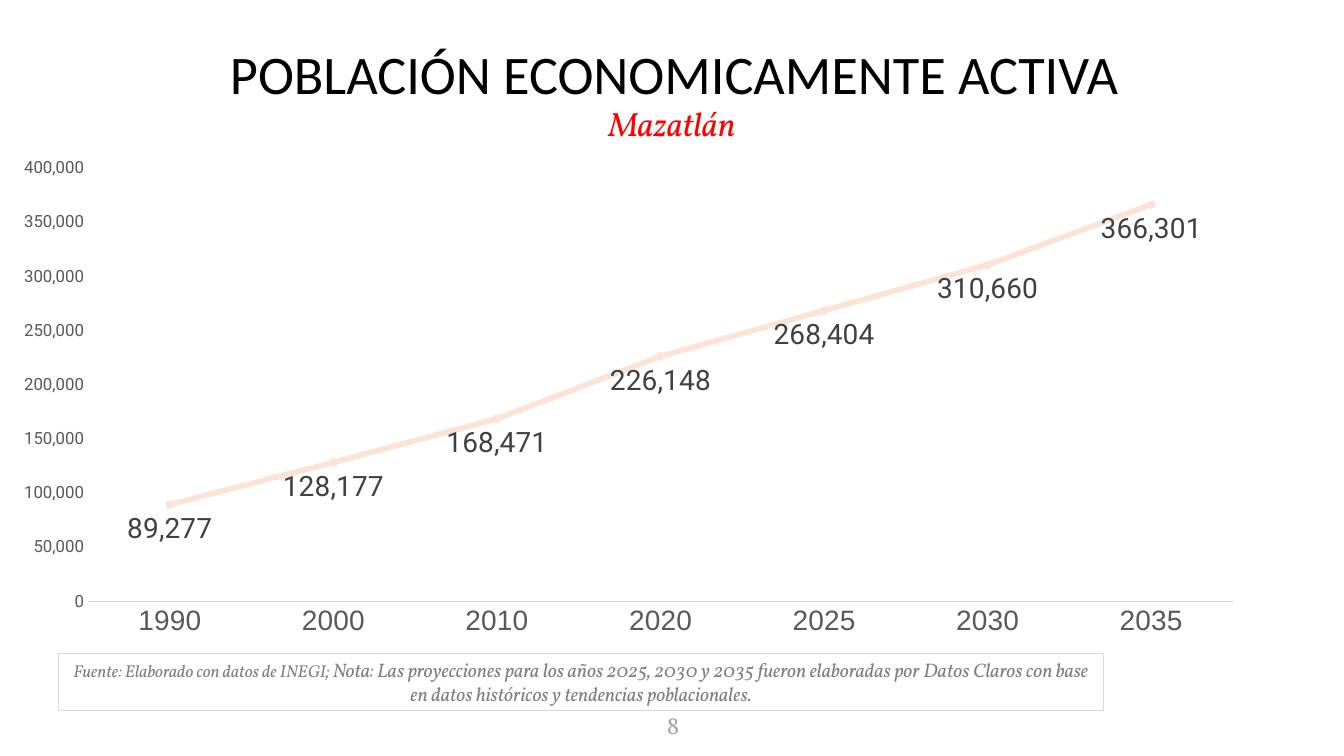
"""Build the slide on the economically active population of Mazatlán."""
from pptx import Presentation
from pptx.chart.data import CategoryChartData
from pptx.dml.color import RGBColor
from pptx.enum import chart as ch, shapes, text
from pptx.oxml import parse_xml
from pptx.oxml.ns import nsdecls
from pptx.util import Inches, Pt


def set_font(font, name, size, color, italic=False):
    font.name, font.size, font.italic = name, Pt(size), italic
    font.color.rgb = RGBColor.from_string(color)


def fill_text(sp, runs, name, color, italic=False):
    tf = sp.text_frame
    tf.word_wrap = True
    tf.vertical_anchor = text.MSO_ANCHOR.MIDDLE
    p = tf.paragraphs[0]
    p.alignment = text.PP_ALIGN.CENTER
    set_font(p.font, name, runs[0][1], color, italic)
    for words, size in runs:
        r = p.add_run()
        r.text = words
        set_font(r.font, name, size, color, italic)
    return p


prs = Presentation()
prs.slide_width, prs.slide_height = Inches(13.33), Inches(7.5)
s = prs.slides.add_slide(prs.slide_layouts[6])

number = s.shapes.add_textbox(Inches(6.13), Inches(7.08), Inches(1.07), Inches(0.24))
fill_text(number, [("8", 17.6)], "Vollkorn", "A6A6A6")
tf = number.text_frame
tf.margin_left, tf.margin_top = Inches(0.12), Inches(0.02)

note = s.shapes.add_shape(shapes.MSO_SHAPE.RECTANGLE, Inches(0.58), Inches(6.48),
                          Inches(10.37), Inches(0.57))
note.shadow.inherit = False
note.fill.background()
note.line.color.rgb = RGBColor.from_string("D9D9D9")
note.line.width = Pt(0.75)
fill_text(note, [
    ("Fuente: Elaborado con datos de INEGI; ", 12.3),
    ("Nota: Las proyecciones para los años 2025, 2030 y 2035 fueron elaboradas por "
     "Datos Claros con base en datos históricos y tendencias poblacionales.", 14),
], "Vollkorn", "808080", True)

data = CategoryChartData(number_format="#,##0")
data.categories = ["1990", "2000", "2010", "2020", "2025", "2030", "2035"]
data.add_series("Series 1", [89277, 128177, 168471, 226148, 268404, 310660, 366301])
chart = s.shapes.add_chart(ch.XL_CHART_TYPE.LINE_MARKERS_STACKED, Inches(0), Inches(1.47),
                           Inches(12.48), Inches(4.94), data).chart
chart.has_legend = chart.has_title = False
set_font(chart.font, "Cabin", 10, "000000")

cat, val = chart.category_axis, chart.value_axis
for axis, name, size in (cat, "Arial", 20), (val, "Roboto", 12):
    axis.major_tick_mark = axis.minor_tick_mark = ch.XL_TICK_MARK.NONE
    axis.has_major_gridlines = False
    set_font(axis.tick_labels.font, name, size, "595959")
cat.format.line.color.rgb = RGBColor.from_string("D9D9D9")
cat.format.line.width = Pt(0.75)
val.format.line.fill.background()
val.minimum_scale, val.maximum_scale, val.major_unit = 0, 400000, 50000
val.tick_labels.number_format = "#,##0"
val.tick_labels.number_format_is_linked = False

plot = chart.plots[0]
plot.vary_by_categories = False
series = plot.series[0]
series.smooth = False
peach = RGBColor.from_string("FBE3D6")
series.format.line.color.rgb = peach
series.format.line.width = Pt(4)
marker = series.marker
marker.style, marker.size = ch.XL_MARKER_STYLE.CIRCLE, 5
marker.format.fill.solid()
marker.format.fill.fore_color.rgb = peach
marker.format.line.color.rgb = peach
labels = series.data_labels
labels.show_value = True
labels.position = ch.XL_LABEL_POSITION.BELOW
labels.number_format, labels.number_format_is_linked = "#,##0", False
set_font(labels.font, "Roboto", 20, "404040")

area = chart._chartSpace.chart.plotArea
for old in area.xpath("c:layout"):
    area.remove(old)
area.insert(0, parse_xml(
    f'<c:layout {nsdecls("c")}><c:manualLayout><c:layoutTarget val="inner"/>'
    '<c:xMode val="edge"/><c:yMode val="edge"/><c:x val="0.07"/><c:y val="0.04"/>'
    '<c:w val="0.91"/><c:h val="0.87"/></c:manualLayout></c:layout>'))

title = s.shapes.add_textbox(Inches(0.97), Inches(0.53), Inches(11.43), Inches(0.57))
p = fill_text(title, [("POBLACIÓN ECONOMICAMENTE ACTIVA", 38.8)], "Calibri", "000000")
p.line_spacing = 0.7
title.text_frame.vertical_anchor = text.MSO_ANCHOR.TOP

city = s.shapes.add_textbox(Inches(0), Inches(0.97), Inches(13.33), Inches(0.5))
p = fill_text(city, [("Mazatlán", 24)], "Vollkorn", "FF0000", True)
p.space_after = Pt(4)
city.text_frame.vertical_anchor = text.MSO_ANCHOR.TOP

prs.save("out.pptx")
